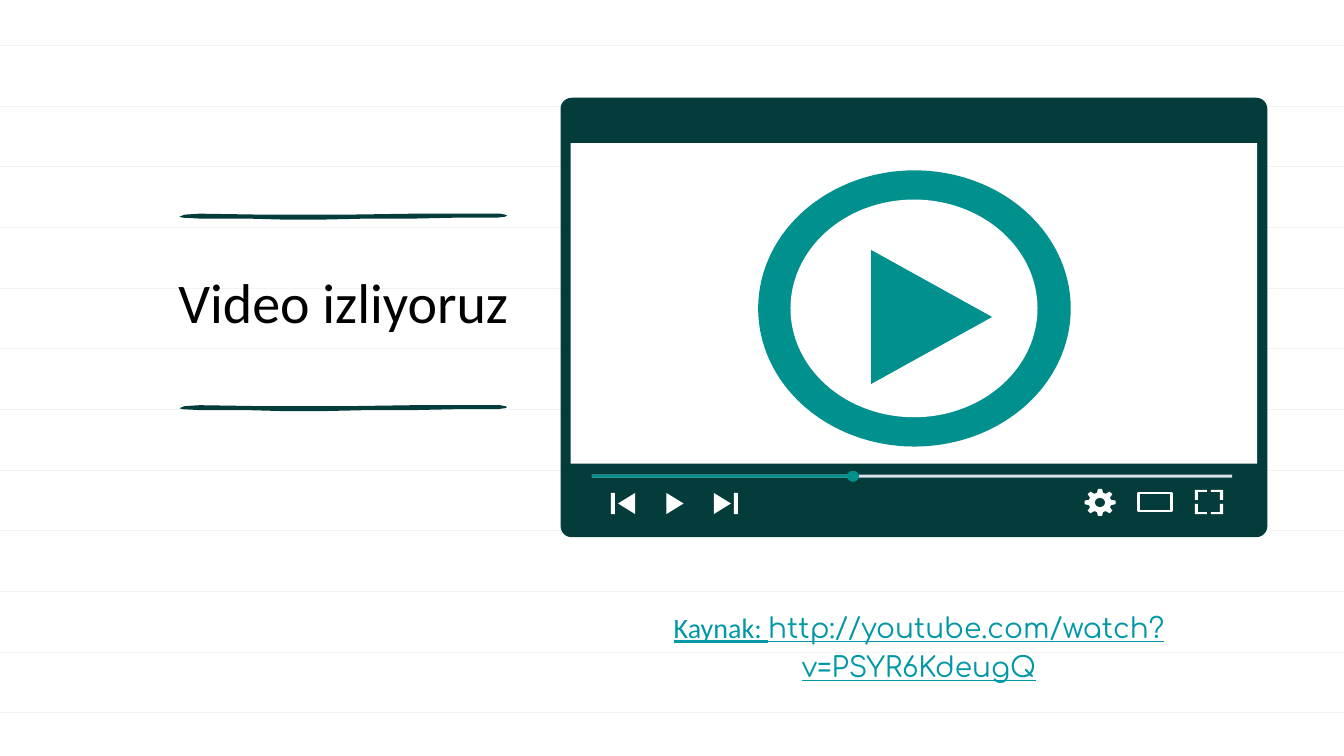
import math

import pptx
import pptx.dml.color
import pptx.enum.shapes
import pptx.enum.text
import pptx.oxml
import pptx.util

Inches = pptx.util.Inches
SHAPES = pptx.enum.shapes.MSO_SHAPE
ALIGN = pptx.enum.text.PP_ALIGN

TITLE = "Video izliyoruz"
SOURCE = [("Kaynak: ", "Calibri"), ("http://youtube.com/watch?v=PSYR6KdeugQ", "Comfortaa")]

THEME = {
    "dark": "043B3B", "teal": "00908E", "white": "FFFFFF", "track": "D9E2E9",
    "rule": "F3F3F3", "link": "0097A7", "text": "000000",
    "title_size": 40, "source_size": 20,
}

RULE_COUNT, RULE_TOP, RULE_STEP = 12, 0.45, 0.602
STROKE_LEFT, STROKE_TOPS = 1.77, (2.12, 4.02)
STROKE = [
    (0.01, 0.03), (0.06, 0.01), (0.21, 0), (0.84, 0.01), (1.66, 0.01), (2.34, 0),
    (3.19, 0), (3.24, 0.01), (3.26, 0.02), (3.24, 0.03), (3.16, 0.04), (2.75, 0.04),
    (2.29, 0.05), (1.84, 0.05), (1.38, 0.06), (1.08, 0.06), (0.71, 0.05), (0.23, 0.05),
    (0.04, 0.04),
]

# Preset parts of the player: shape, left, top, width, height, colour
PLAYER = [
    (SHAPES.ROUNDED_RECTANGLE, 5.56, 0.97, 7.01, 4.36, "dark"),
    (SHAPES.RECTANGLE, 5.66, 1.42, 6.81, 3.18, "white"),
    (SHAPES.OVAL, 7.52, 1.69, 3.1, 2.74, "teal"),
    (SHAPES.OVAL, 7.84, 1.98, 2.45, 2.16, "white"),
    (SHAPES.RECTANGLE, 5.87, 4.71, 6.35, 0.03, "track"),
    (SHAPES.RECTANGLE, 5.87, 4.71, 2.59, 0.03, "teal"),
    (SHAPES.OVAL, 8.4, 4.67, 0.12, 0.11, "teal"),
    (SHAPES.RECTANGLE, 6.06, 4.89, 0.04, 0.21, "white"),
    (SHAPES.RECTANGLE, 7.28, 4.89, 0.04, 0.21, "white"),
]
CORNER_RADIUS = 0.11

# Triangles: base x, top, signed width, height, colour
TRIANGLES = [
    (8.64, 2.48, 1.2, 1.33, "teal"),
    (6.3, 4.89, -0.17, 0.21, "white"),
    (6.61, 4.89, 0.17, 0.21, "white"),
    (7.08, 4.89, 0.17, 0.21, "white"),
]
GEAR_CENTER, GEAR_RADII, GEAR_TEETH = (10.91, 4.985), (0.155, 0.135), 8
GEAR_TOOTH = [(-0.27, 0.73), (-0.13, 1), (0.13, 1), (0.27, 0.73)]
WIDE_VIEW = (11.29, 4.89, 0.33, 0.18)
FULL_CENTER = (11.99, 4.98)
FULL_CORNER = [(0.02, 0.12), (0.14, 0.12), (0.14, 0.02), (0.11, 0.02), (0.11, 0.1), (0.02, 0.1)]


def color(name):
    return pptx.dml.color.RGBColor.from_string(THEME[name])


def paint(shape, name):
    shape.shadow.inherit = False
    shape.fill.solid()
    shape.fill.fore_color.rgb = color(name)
    shape.line.fill.background()
    return shape


def add_preset(slide, kind, left, top, width, height, name):
    box = [Inches(value) for value in (left, top, width, height)]
    return paint(slide.shapes.add_shape(kind, *box), name)


def add_outline(slide, points, name):
    corners = [(Inches(x), Inches(y)) for x, y in points]
    builder = slide.shapes.build_freeform(*corners[0])
    builder.add_line_segments(corners[1:], close=True)
    return paint(builder.convert_to_shape(), name)


def write_text(shape, runs, size, name, align, underline=False, spacing=1.0):
    """Fill a shape with one paragraph of (text, font) runs."""
    frame = shape.text_frame
    frame.word_wrap = True
    frame.auto_size = pptx.enum.text.MSO_AUTO_SIZE.NONE
    frame.vertical_anchor = pptx.enum.text.MSO_ANCHOR.TOP
    frame.margin_left = frame.margin_right = Inches(0.13)
    frame.margin_top = frame.margin_bottom = Inches(0.13)
    paragraph = frame.paragraphs[0]
    paragraph.alignment = align
    paragraph.line_spacing = spacing
    for text, font_name in runs:
        run = paragraph.add_run()
        run.text = text
        run.font.name = font_name
        run.font.size = pptx.util.Pt(size)
        run.font.underline = underline
        run.font.color.rgb = color(name)


def add_ruled_paper(slide, width):
    for index in range(RULE_COUNT):
        y = Inches(RULE_TOP + index * RULE_STEP)
        rule = slide.shapes.add_connector(
            pptx.enum.shapes.MSO_CONNECTOR.STRAIGHT, 0, y, width, y)
        rule.line.color.rgb = color("rule")
        rule.line.width = pptx.util.Pt(0.75)
        rule._element.spPr.append(pptx.oxml.parse_xml(
            '<a:effectLst xmlns:a="http://schemas.openxmlformats.org/drawingml/2006/main"/>'))


def add_title(slide):
    title = slide.shapes.title
    title.left, title.top = Inches(1.64), Inches(2.52)
    title.width, title.height = Inches(3.57), Inches(1.16)
    write_text(title, [(TITLE, "Calibri")], THEME["title_size"], "text", ALIGN.LEFT)
    slide.shapes._spTree.append(title._element)  # in front of the ruled lines
    for top in STROKE_TOPS:
        add_outline(slide, [(STROKE_LEFT + x, top + y) for x, y in STROKE], "dark")


def add_gear(slide):
    points = []
    for tooth in range(GEAR_TEETH):
        for offset, radius in GEAR_TOOTH:
            angle = tooth * math.tau / GEAR_TEETH + offset
            points.append((GEAR_CENTER[0] + GEAR_RADII[0] * radius * math.sin(angle),
                           GEAR_CENTER[1] - GEAR_RADII[1] * radius * math.cos(angle)))
    add_outline(slide, points, "white")
    add_preset(slide, SHAPES.OVAL, GEAR_CENTER[0] - 0.05, GEAR_CENTER[1] - 0.045,
               0.1, 0.09, "dark")


def add_player(slide):
    for part in PLAYER:
        shape = add_preset(slide, *part)
        if part[0] == SHAPES.ROUNDED_RECTANGLE:
            shape.adjustments[0] = CORNER_RADIUS / part[4]
    for base, top, width, height, name in TRIANGLES:
        add_outline(slide, [(base, top), (base, top + height),
                            (base + width, top + height / 2)], name)
    add_gear(slide)
    wide_view = add_preset(slide, SHAPES.RECTANGLE, *WIDE_VIEW, "dark")
    wide_view.line.color.rgb = color("white")
    wide_view.line.width = pptx.util.Pt(2)
    for side_x in (-1, 1):
        for side_y in (-1, 1):
            add_outline(slide, [(FULL_CENTER[0] + side_x * x, FULL_CENTER[1] + side_y * y)
                                for x, y in FULL_CORNER], "white")


def main():
    presentation = pptx.Presentation()
    presentation.slide_width, presentation.slide_height = Inches(13.33), Inches(7.5)
    slide = presentation.slides.add_slide(presentation.slide_layouts[5])
    add_ruled_paper(slide, presentation.slide_width)
    add_title(slide)
    source = slide.shapes.add_textbox(Inches(5.48), Inches(5.88), Inches(7.27), Inches(0.46))
    write_text(source, SOURCE, THEME["source_size"], "link", ALIGN.CENTER,
               underline=True, spacing=1.15)
    add_player(slide)
    presentation.save("out.pptx")


if __name__ == "__main__":
    main()
